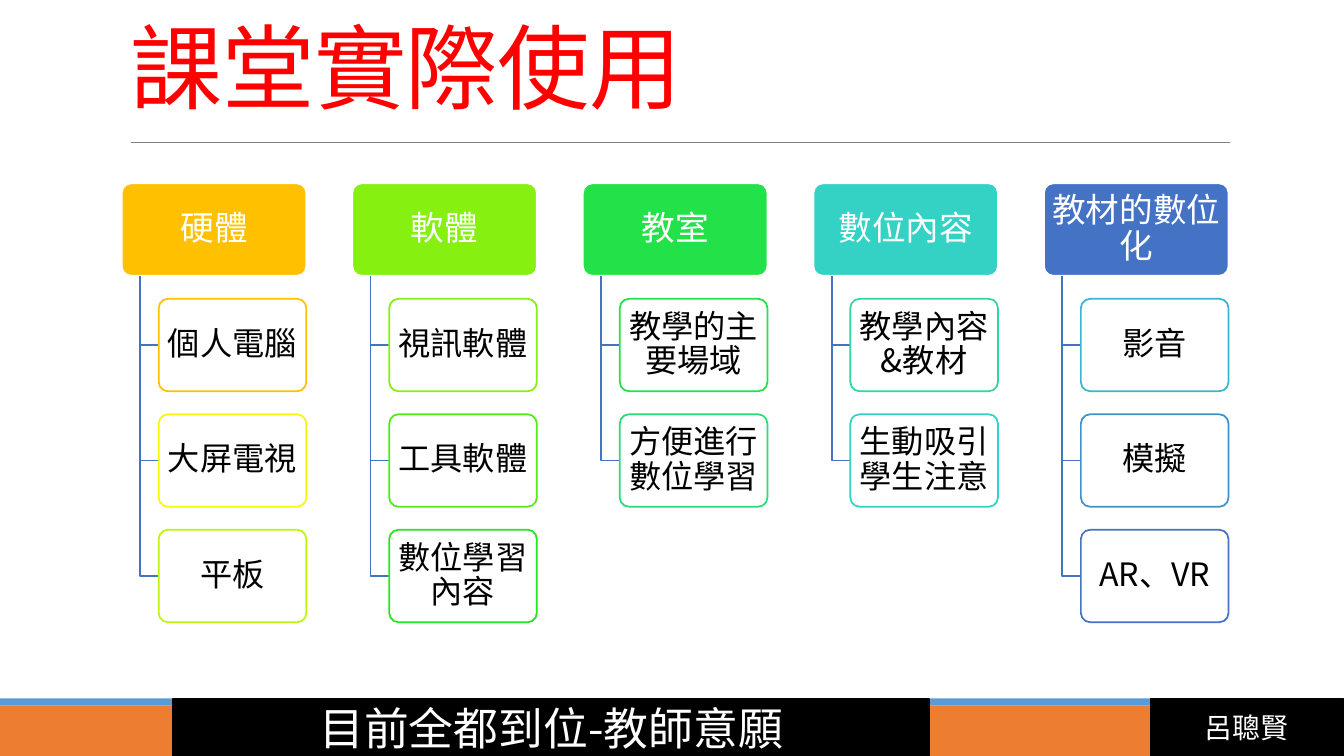
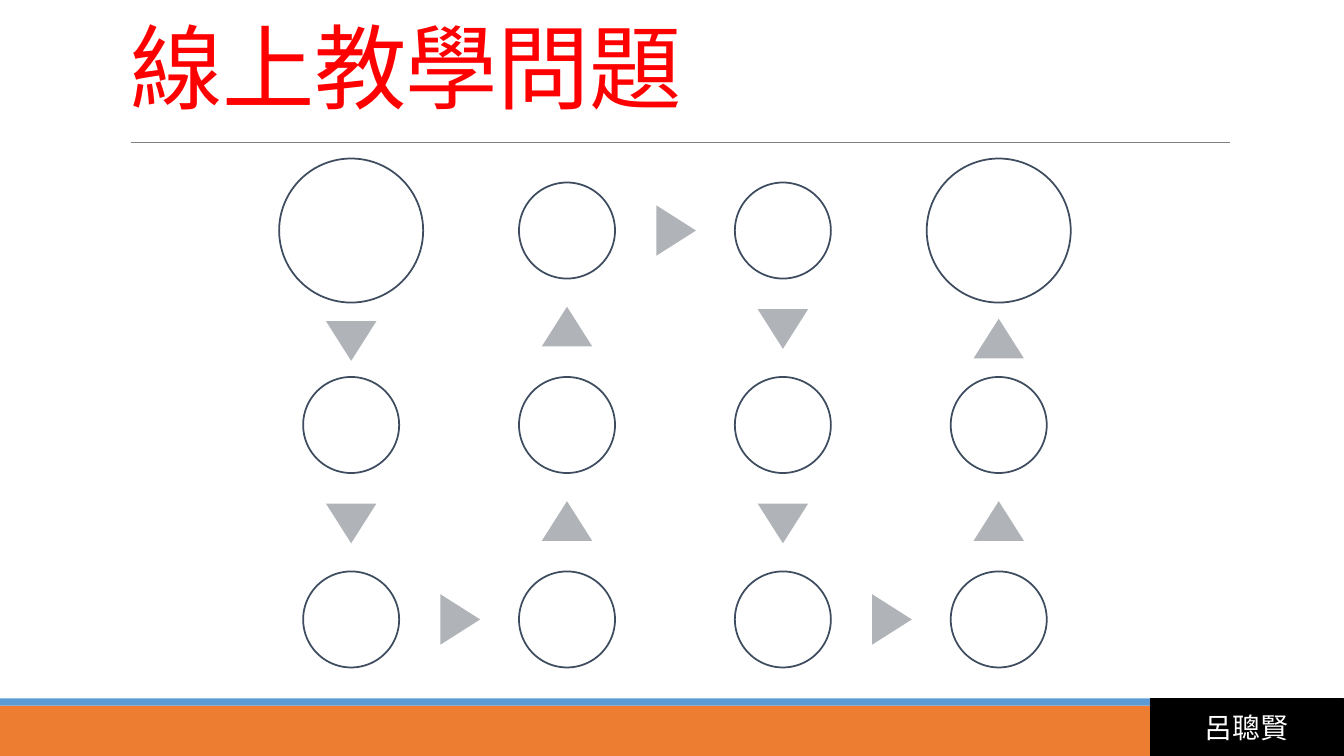
from dataclasses import dataclass

import pptx
import pptx.dml.color
import pptx.enum.shapes
import pptx.enum.text
import pptx.oxml.ns
import pptx.util
from lxml import etree

Cm = pptx.util.Cm
Pt = pptx.util.Pt
Shape = pptx.enum.shapes.MSO_SHAPE
Anchor = pptx.enum.text.MSO_ANCHOR
Align = pptx.enum.text.PP_ALIGN

FONT = "Noto Sans CJK SC"
WHITE, BLACK, RED = "FFFFFF", "000000", "FF0000"
ORANGE, SKY, GREY = "ED7D31", "5B9BD5", "808080"
BRANCH_BLUE, RING, ARROW = "4472C4", "3E4C60", "B0B4B9"
SLIDE_WIDTH, SLIDE_HEIGHT = 33.87, 19.05
LINE_WIDTH = 1.25


@dataclass
class Box:
    """Position and size in centimetres."""
    left: float
    top: float
    width: float
    height: float

    def lengths(self) -> tuple:
        return Cm(self.left), Cm(self.top), Cm(self.width), Cm(self.height)


@dataclass
class Item:
    text: str
    color: str


@dataclass
class Topic:
    heading: Item
    items: list[Item]


@dataclass
class Node:
    x: float
    y: float
    diameter: float


# Shared drawing helpers
def rgb(color: str):
    return pptx.dml.color.RGBColor.from_string(color)


def add_block(slide, kind, box: Box, fill: str, line: str | None = None):
    shape = slide.shapes.add_shape(kind, *box.lengths())
    shape.shadow.inherit = False
    shape.fill.solid()
    shape.fill.fore_color.rgb = rgb(fill)
    if line:
        shape.line.color.rgb = rgb(line)
        shape.line.width = Pt(LINE_WIDTH)
    else:
        shape.line.fill.background()
    return shape


def write(shape, text: str, size: float, color: str, align=Align.CENTER,
          anchor=Anchor.MIDDLE, spacing: float = 1.0):
    frame = shape.text_frame
    frame.word_wrap = True
    frame.vertical_anchor = anchor
    paragraph = frame.paragraphs[0]
    paragraph.text = text
    paragraph.alignment = align
    paragraph.line_spacing = spacing
    run = paragraph.runs[0]
    run.font.size = Pt(size)
    run.font.name = FONT
    run.font.color.rgb = rgb(color)
    properties = run.font._element
    east_asian = etree.SubElement(properties, pptx.oxml.ns.qn("a:ea"))
    east_asian.set("typeface", FONT)
    return run


def add_slide(presentation, title: str):
    """Blank slide with the shared bands, rule, name tag and title."""
    slide = presentation.slides.add_slide(presentation.slide_layouts[6])
    add_block(slide, Shape.RECTANGLE, Box(0, 17.78, SLIDE_WIDTH, 1.27), ORANGE)
    add_block(slide, Shape.RECTANGLE, Box(0, 17.6, SLIDE_WIDTH, 0.18), SKY)

    rule = slide.shapes.add_connector(
        pptx.enum.shapes.MSO_CONNECTOR.STRAIGHT,
        Cm(3.3), Cm(3.58), Cm(31), Cm(3.58))
    rule.line.color.rgb = rgb(GREY)
    rule.line.width = Pt(0.5)
    etree.SubElement(rule._element.spPr, pptx.oxml.ns.qn("a:effectLst"))

    name_tag = add_block(slide, Shape.RECTANGLE, Box(29, 17.6, 4.85, 1.46),
                         BLACK, BLACK)
    write(name_tag, "呂聰賢", 20, WHITE)

    title_box = slide.shapes.add_textbox(*Box(3.05, 0.79, 27.94, 2.39).lengths())
    run = write(title_box, title, 66, RED, Align.LEFT, Anchor.BOTTOM, 0.85)
    run.font._element.set("spc", "-50")
    return slide


# Classroom slide: headings with branches below
TOPICS = [
    Topic(Item("硬體", "FFC000"), [
        Item("個人電腦", "FFC000"), Item("大屏電視", "FAF806"),
        Item("平板", "BEF50C")]),
    Topic(Item("軟體", "86F011"), [
        Item("視訊軟體", "86F011"), Item("工具軟體", "53EB17"),
        Item("數位學習內容", "26E61D")]),
    Topic(Item("教室", "23E148"), [
        Item("教學的主要場域", "23E148"), Item("方便進行數位學習", "28DC77")]),
    Topic(Item("數位內容", "33D2C5"), [
        Item("教學內容&教材", "2ED7A1"), Item("生動吸引學生注意", "33D2C5")]),
    Topic(Item("教材的數位化", "4472C4"), [
        Item("影音", "39B6CE"), Item("模擬", "3F91C9"),
        Item("AR、VR", "4472C4")]),
]
TREE_LEFT, TREE_TOP = 3.07, 4.62
COLUMN_PITCH, ROW_PITCH = 5.81, 2.91
CARD_HEIGHT, HEADING_WIDTH, ITEM_WIDTH = 2.33, 4.65, 3.72
TRUNK_INDENT, ITEM_INDENT = 0.46, 0.93


def add_card(slide, box: Box, text: str, size: float, color: str,
             fill: str, line: str) -> None:
    card = add_block(slide, Shape.ROUNDED_RECTANGLE, box, fill, line)
    card.adjustments[0] = 0.1
    frame = card.text_frame
    frame.margin_left = frame.margin_right = Cm(0.12)
    frame.margin_top = frame.margin_bottom = Cm(0.08)
    write(card, text, size, color, spacing=0.9)


def add_branch(slide, x: float, top: float, end_x: float, end_y: float) -> None:
    builder = slide.shapes.build_freeform(Cm(x), Cm(top))
    builder.add_line_segments(
        [(Cm(x), Cm(end_y)), (Cm(end_x), Cm(end_y))], close=False)
    branch = builder.convert_to_shape()
    branch.shadow.inherit = False
    branch.fill.background()
    branch.line.color.rgb = rgb(BRANCH_BLUE)
    branch.line.width = Pt(LINE_WIDTH)


def add_topic(slide, topic: Topic, left: float) -> None:
    add_card(slide, Box(left, TREE_TOP, HEADING_WIDTH, CARD_HEIGHT),
             topic.heading.text, 24, WHITE, topic.heading.color, WHITE)
    item_left = left + ITEM_INDENT
    for row, item in enumerate(topic.items, start=1):
        top = TREE_TOP + row * ROW_PITCH
        add_branch(slide, left + TRUNK_INDENT, TREE_TOP + CARD_HEIGHT,
                   item_left, top + CARD_HEIGHT / 2)
        add_card(slide, Box(item_left, top, ITEM_WIDTH, CARD_HEIGHT),
                 item.text, 23, BLACK, WHITE, item.color)


def build_classroom(presentation) -> None:
    slide = add_slide(presentation, "課堂實際使用")
    for column, topic in enumerate(TOPICS):
        add_topic(slide, topic, TREE_LEFT + column * COLUMN_PITCH)
    banner = add_block(slide, Shape.RECTANGLE, Box(4.37, 17.61, 19.05, 1.44),
                       BLACK, BLACK)
    write(banner, "目前全都到位-教師意願", 32, WHITE)


# Problems slide: circles on a winding path
COLUMNS, ROWS = 4, 3
FIRST_X, FIRST_Y = 8.85, 5.81
STEP_X, STEP_Y = 5.44, 4.9
SMALL, LARGE = 2.42, 3.63
ARROW_WIDTH, ARROW_HEIGHT = 1.27, 1.0
ARROW_LEAD = 0.03


def winding_path() -> list[Node]:
    """Down the even columns and up the odd ones, with large ends."""
    nodes = []
    for column in range(COLUMNS):
        rows = range(ROWS) if column % 2 == 0 else reversed(range(ROWS))
        nodes += [Node(FIRST_X + column * STEP_X, FIRST_Y + row * STEP_Y, SMALL)
                  for row in rows]
    nodes[0].diameter = nodes[-1].diameter = LARGE
    return nodes


def add_centred(slide, kind, x: float, y: float, width: float, height: float,
                fill: str, line: str | None = None):
    box = Box(x - width / 2, y - height / 2, width, height)
    return add_block(slide, kind, box, fill, line)


def add_arrow(slide, start: Node, end: Node) -> None:
    """Triangle midway between the facing edges of two circles."""
    shift = (start.diameter - end.diameter) / 4 + ARROW_LEAD
    x, y = (start.x + end.x) / 2, (start.y + end.y) / 2
    if end.x > start.x:
        x, rotation = x + shift, 90
    elif end.y > start.y:
        y, rotation = y + shift, 180
    else:
        y, rotation = y - shift, 0
    arrow = add_centred(slide, Shape.ISOSCELES_TRIANGLE, x, y,
                        ARROW_WIDTH, ARROW_HEIGHT, ARROW)
    arrow.rotation = rotation


def build_problems(presentation) -> None:
    slide = add_slide(presentation, "線上教學問題")
    nodes = winding_path()
    for node in nodes:
        add_centred(slide, Shape.OVAL, node.x, node.y,
                    node.diameter, node.diameter, WHITE, RING)
    for start, end in zip(nodes, nodes[1:]):
        add_arrow(slide, start, end)


def main() -> None:
    presentation = pptx.Presentation()
    presentation.slide_width = Cm(SLIDE_WIDTH)
    presentation.slide_height = Cm(SLIDE_HEIGHT)
    build_classroom(presentation)
    build_problems(presentation)
    presentation.save("out.pptx")


if __name__ == "__main__":
    main()
